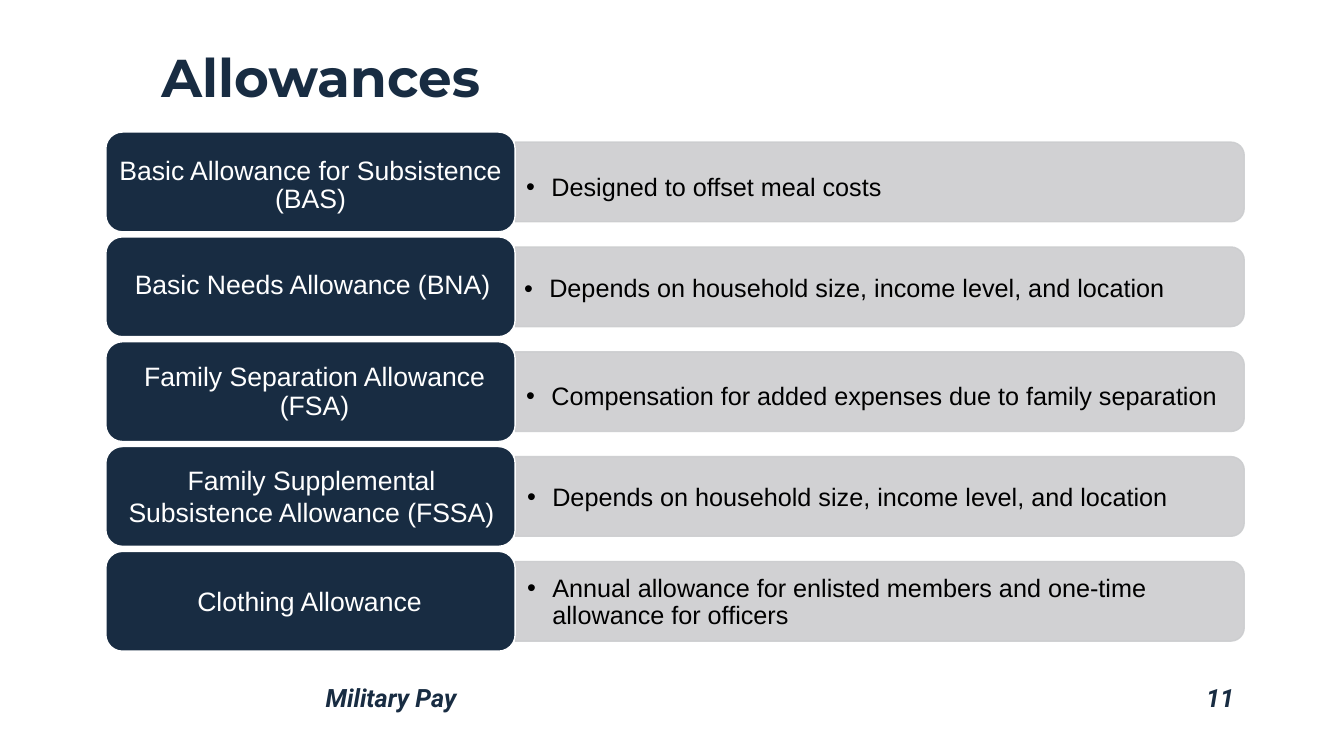
"""Build the Allowances slide: five named allowances, each with a short explanation."""
from lxml.etree import SubElement
from pptx import Presentation
from pptx.dml.color import RGBColor
from pptx.enum.shapes import MSO_SHAPE
from pptx.enum.text import MSO_ANCHOR, MSO_AUTO_SIZE, PP_ALIGN
from pptx.oxml.ns import qn
from pptx.util import Inches, Pt

NAVY = RGBColor(0x18, 0x2C, 0x42)
GREY = RGBColor(0xCC, 0xCD, 0xCF)
WHITE = RGBColor(0xFF, 0xFF, 0xFF)
BLACK = RGBColor(0x00, 0x00, 0x00)

ROW_TOP, ROW_PITCH = 1.31, 1.04
NAME_LEFT, NAME_WIDTH, NAME_HEIGHT = 1.05, 4.06, 0.99
BAR_LEFT, BAR_LENGTH, BAR_THICKNESS = 5.11, 7.23, 0.79

ALLOWANCES = [
    ("Basic Allowance for Subsistence (BAS)", (1.07, 1.51, 4.02, 0.73), 0.9,
     "Designed to offset meal costs", (5.12, 1.64, 7.22, 0.46)),
    ("Basic Needs Allowance (BNA)", (1.09, 2.64, 4.02, 0.38), 0.9,
     "Depends on household size, income level, and location", (5.1, 2.68, 7.24, 0.39)),
    ("Family Separation Allowance (FSA)", (1.13, 3.56, 3.98, 0.67), 0.9,
     "Compensation for added expenses due to family separation", (5.12, 3.72, 7.21, 0.44)),
    ("Family Supplemental Subsistence Allowance (FSSA)", (1.07, 4.55, 4.04, 0.74), 1.0,
     "Depends on household size, income level, and location", (5.13, 4.63, 7.63, 0.62)),
    ("Clothing Allowance", (1.05, 5.79, 4.04, 0.36), 0.9,
     "Annual allowance for enlisted members and one-time allowance for officers",
     (5.13, 5.66, 7.21, 0.64)),
]


def write(text, area, holder=None, size=18, font="Arial", color=NAVY, bold=False, italic=False,
          align=PP_ALIGN.LEFT, anchor=MSO_ANCHOR.TOP, spacing=0.9, bullet=False):
    left, top, width, height = map(Inches, area)
    if holder is None:
        holder = slide.shapes.add_textbox(left, top, width, height)
    holder.left, holder.top, holder.width, holder.height = left, top, width, height
    frame = holder.text_frame
    frame.text = text
    frame.word_wrap = True
    frame.auto_size = MSO_AUTO_SIZE.NONE
    frame.vertical_anchor = anchor
    paragraph = frame.paragraphs[0]
    if bullet:
        properties = paragraph._p.get_or_add_pPr()
        properties.set("marL", str(Inches(0.25)))
        properties.set("indent", str(Inches(-0.25)))
        SubElement(properties, qn("a:buFont"), typeface="Arial")
        SubElement(properties, qn("a:buChar"), char="•")
    paragraph.alignment = align
    paragraph.line_spacing = spacing
    paragraph.space_before = Pt(0)
    letters = paragraph.runs[0].font
    letters.size, letters.name = Pt(size), font
    letters.bold, letters.italic = bold, italic
    letters.color.rgb = color


def add_panel(kind, left, top, width, height, fill, line):
    panel = slide.shapes.add_shape(kind, Inches(left), Inches(top), Inches(width), Inches(height))
    panel.shadow.inherit = False
    panel.fill.solid()
    panel.fill.fore_color.rgb = fill
    panel.line.color.rgb = line
    panel.line.width = Pt(1)
    return panel


deck = Presentation()
deck.slide_width, deck.slide_height = Inches(13.33), Inches(7.5)
slide = deck.slides.add_slide(deck.slide_layouts[0])

write("Allowances", (1.5, 0.11, 10.84, 1.02), holder=slide.shapes.title, size=38,
      font="Montserrat", bold=True, anchor=MSO_ANCHOR.BOTTOM)
write("Military Pay", (3.13, 6.75, 7.63, 0.38), holder=slide.placeholders[1],
      font="Roboto", bold=True, italic=True)
write("11", (10.76, 6.75, 1.58, 0.38), font="Roboto", bold=True, italic=True,
      align=PP_ALIGN.RIGHT)

for row, (name, name_area, name_spacing, detail, detail_area) in enumerate(ALLOWANCES):
    top = ROW_TOP + row * ROW_PITCH
    bar_left = BAR_LEFT + (BAR_LENGTH - BAR_THICKNESS) / 2
    bar_top = top + (NAME_HEIGHT - BAR_LENGTH) / 2
    bar = add_panel(MSO_SHAPE.ROUND_2_SAME_RECTANGLE, bar_left, bar_top,
                    BAR_THICKNESS, BAR_LENGTH, GREY, GREY)
    bar.rotation = 90
    for shade in bar._element.spPr.iter(qn("a:srgbClr")):
        SubElement(shade, qn("a:alpha"), val="90000")
    add_panel(MSO_SHAPE.ROUNDED_RECTANGLE, NAME_LEFT, top, NAME_WIDTH, NAME_HEIGHT, NAVY, WHITE)
    write(name, name_area, size=19, color=WHITE, align=PP_ALIGN.CENTER, spacing=name_spacing)
    write(detail, detail_area, color=BLACK, anchor=MSO_ANCHOR.MIDDLE, bullet=True)

deck.save("out.pptx")
